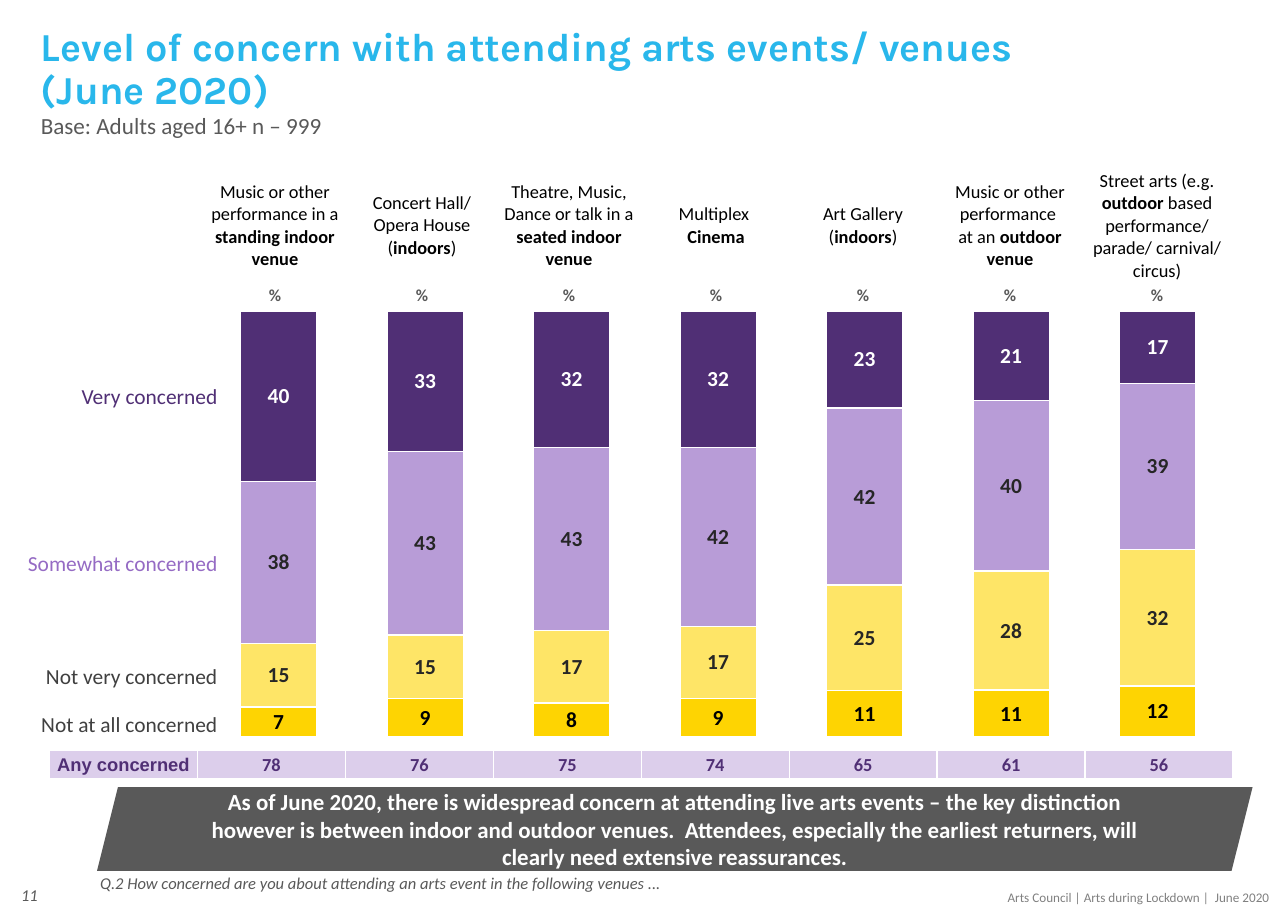
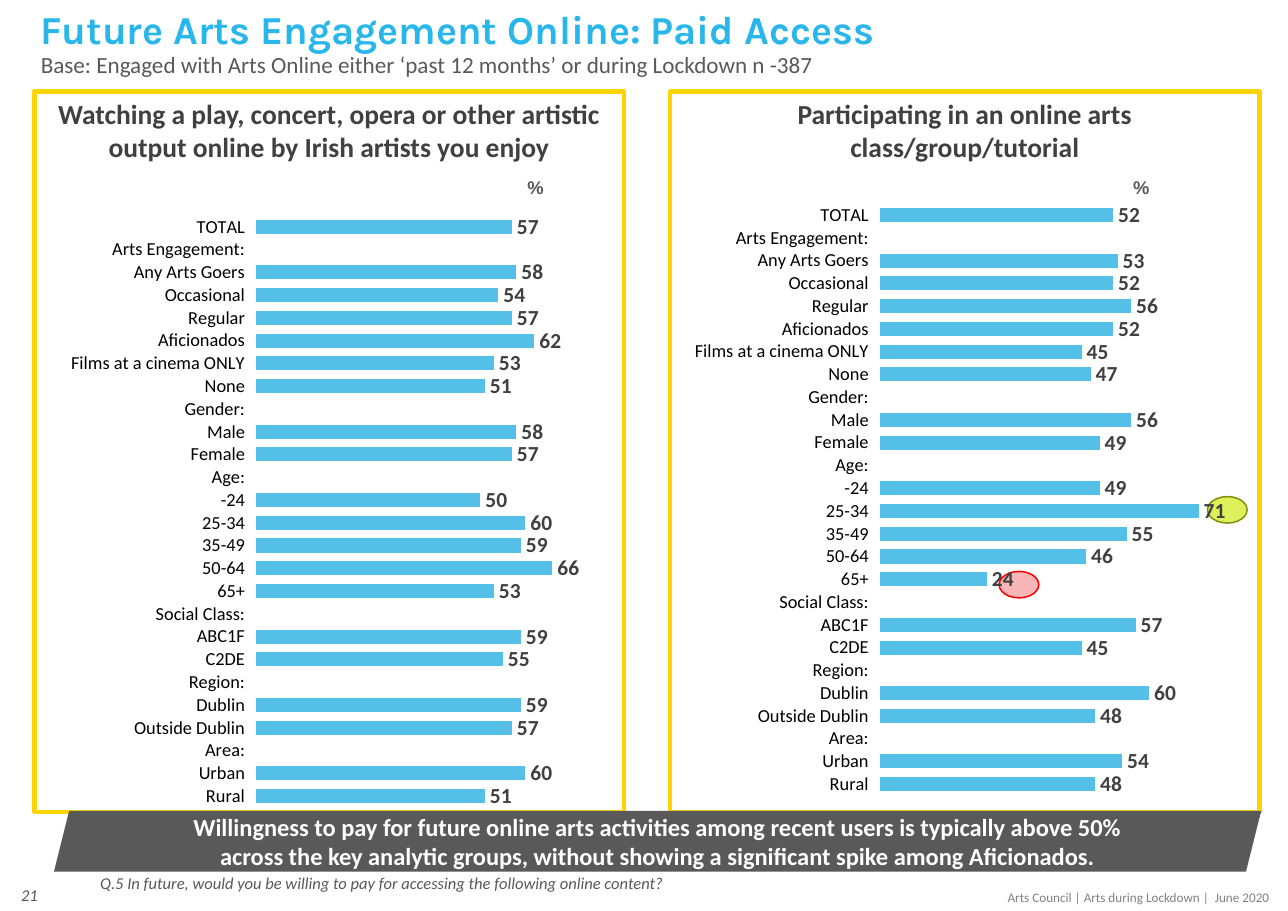
from dataclasses import dataclass, replace

from lxml.etree import SubElement
from pptx import Presentation
from pptx.chart.data import CategoryChartData
from pptx.dml.color import RGBColor
from pptx.enum.chart import XL_CHART_TYPE, XL_LABEL_POSITION, XL_TICK_MARK
from pptx.enum.shapes import MSO_SHAPE
from pptx.enum.text import MSO_ANCHOR, MSO_AUTO_SIZE, PP_ALIGN
from pptx.oxml import parse_xml
from pptx.oxml.ns import nsdecls, qn
from pptx.util import Pt

WHITE = RGBColor(0xFF, 0xFF, 0xFF)
BLACK = RGBColor(0x00, 0x00, 0x00)
INK = RGBColor(0x26, 0x26, 0x26)
CHARCOAL = RGBColor(0x40, 0x40, 0x40)
SLATE = RGBColor(0x59, 0x59, 0x59)
GREY = RGBColor(0x80, 0x80, 0x80)
TITLE_BLUE = RGBColor(0x29, 0xB7, 0xEB)
BAR_BLUE = RGBColor(0x54, 0xC0, 0xE8)
PURPLE = RGBColor(0x50, 0x2F, 0x75)
VIOLET = RGBColor(0x95, 0x6B, 0xC4)
LILAC = RGBColor(0xB8, 0x9C, 0xD7)
PALE_LILAC = RGBColor(0xDC, 0xCE, 0xEB)
PALE_YELLOW = RGBColor(0xFE, 0xE5, 0x67)
YELLOW = RGBColor(0xFE, 0xD4, 0x02)
LIME = RGBColor(0xDE, 0xF1, 0x5B)
OLIVE = RGBColor(0x81, 0x91, 0x0D)
PINK = RGBColor(0xF8, 0xB6, 0xB8)
RED = RGBColor(0xFF, 0x00, 0x00)

NO_TABLE_STYLE = "{2D5ABB26-0587-4C30-8999-92F81FD0307C}"


@dataclass(frozen=True)
class Style:
    size: float
    color: RGBColor
    font: str = "Calibri"
    bold: bool = False
    italic: bool = False


TITLE = Style(25.9, TITLE_BLUE, "Karla", bold=True)
SUBTITLE = Style(15.1, SLATE)
NOTE = Style(10.8, SLATE, italic=True)
FOOTER = Style(8.6, GREY)
BAND = Style(15, WHITE, bold=True)
HEADING = Style(18, CHARCOAL, bold=True)
VENUE = Style(12, BLACK)
PERCENT = Style(11, SLATE, bold=True)
LEVEL = Style(14, PURPLE)
NET = Style(12, PURPLE, bold=True)
VALUE = Style(14, CHARCOAL, bold=True)

VENUES = [
    "Music or other performance in a **standing indoor venue**",
    "Concert Hall/\nOpera House (**indoors**)",
    "Theatre, Music, Dance or talk in a **seated indoor venue**",
    "Multiplex \n**Cinema**",
    "Art Gallery (**indoors**)",
    "Music or other performance \nat an **outdoor venue**",
    "Street arts (e.g. **outdoor** based performance/ parade/ carnival/ circus)",
]
# level of concern, its text colour, bar colour, value colour, values by venue
CONCERN = [
    ("Very concerned", PURPLE, PURPLE, WHITE, [40, 33, 32, 32, 23, 21, 17]),
    ("Somewhat concerned", VIOLET, LILAC, INK, [38, 43, 43, 42, 42, 40, 39]),
    ("Not very concerned", CHARCOAL, PALE_YELLOW, INK, [15, 15, 17, 17, 25, 28, 32]),
    ("Not at all concerned", CHARCOAL, YELLOW, BLACK, [7, 9, 8, 9, 11, 11, 12]),
]
ANY_CONCERNED = [78, 76, 75, 74, 65, 61, 56]

GROUPS = [
    "TOTAL", "Arts Engagement:", "Any Arts Goers", "Occasional", "Regular",
    "Aficionados", "Films at a cinema ONLY", "None", "Gender:", "Male", "Female",
    "Age:", "-24", "25-34", "35-49", "50-64", "65+", "Social Class:", "ABC1F",
    "C2DE", "Region:", "Dublin", "Outside Dublin", "Area:", "Urban", "Rural",
]
WATCHING = [57, None, 58, 54, 57, 62, 53, 51, None, 58, 57, None, 50,
            60, 59, 66, 53, None, 59, 55, None, 59, 57, None, 60, 51]
PARTICIPATING = [52, None, 53, 52, 56, 52, 45, 47, None, 56, 49, None, 49,
                 71, 55, 46, 24, None, 57, 45, None, 60, 48, None, 54, 48]


def points(*lengths):
    return [Pt(length) for length in lengths]


def set_font(font, style):
    font.size = Pt(style.size)
    font.name = style.font
    font.bold = style.bold
    font.italic = style.italic
    font.color.rgb = style.color


def write(frame, text, style, align=PP_ALIGN.LEFT, spacing=None):
    """Write text run by run; newlines part paragraphs, ** marks bold."""
    frame.word_wrap = True
    for index, line in enumerate(text.split("\n")):
        paragraph = frame.add_paragraph() if index else frame.paragraphs[0]
        paragraph.alignment = align
        paragraph.line_spacing = spacing
        for part_index, part in enumerate(line.split("**")):
            if part:
                run = paragraph.add_run()
                run.text = part
                set_font(run.font, replace(style, bold=style.bold or part_index % 2 == 1))
        if not line:
            SubElement(paragraph._p, qn("a:endParaRPr")).set("sz", str(int(style.size * 100)))


def add_text(slide, box, text, style, align=PP_ALIGN.LEFT, spacing=None):
    frame = slide.shapes.add_textbox(*points(*box)).text_frame
    write(frame, text, style, align, spacing)


def add_figure(slide, kind, box, fill=None, line=None, line_width=1):
    figure = slide.shapes.add_shape(kind, *points(*box))
    figure.shadow.inherit = False
    if fill is None:
        figure.fill.background()
    else:
        figure.fill.solid()
        figure.fill.fore_color.rgb = fill
    if line is None:
        figure.line.fill.background()
    else:
        figure.line.color.rgb = line
        figure.line.width = Pt(line_width)
    return figure


def add_band(slide, box, text, size):
    frame = add_figure(slide, MSO_SHAPE.PARALLELOGRAM, box, SLATE).text_frame
    frame.margin_left = frame.margin_right = frame.margin_top = frame.margin_bottom = 0
    frame.vertical_anchor = MSO_ANCHOR.MIDDLE
    write(frame, text, replace(BAND, size=size), PP_ALIGN.CENTER)


def outline_cell(cell, color):
    properties = cell._tc.get_or_add_tcPr()
    for index, side in enumerate(("lnL", "lnR", "lnT", "lnB")):
        properties.insert(index, parse_xml(
            f'<a:{side} {nsdecls("a")} w="12700"><a:solidFill>'
            f'<a:srgbClr val="{color}"/></a:solidFill></a:{side}>'))


def add_grid(slide, left, top, column_widths, row_heights, rows,
             align=PP_ALIGN.CENTER, fill=None):
    """Add a table; rows hold (text, style) pairs."""
    frame = slide.shapes.add_table(len(rows), len(column_widths), *points(
        left, top, sum(column_widths), sum(row_heights)))
    table = frame.table
    table.first_row = table.horz_banding = False
    for style_id in frame._element.iter(qn("a:tableStyleId")):
        style_id.text = NO_TABLE_STYLE
    for column, width in zip(table.columns, column_widths):
        column.width = Pt(width)
    for row, height, entries in zip(table.rows, row_heights, rows):
        row.height = Pt(height)
        for cell, (text, style) in zip(row.cells, entries):
            cell.margin_left = cell.margin_right = cell.margin_top = Pt(0.7)
            cell.margin_bottom = 0
            cell.vertical_anchor = MSO_ANCHOR.MIDDLE
            write(cell.text_frame, text, style, align)
            if fill is None:
                cell.fill.background()
            else:
                cell.fill.solid()
                cell.fill.fore_color.rgb = fill
                outline_cell(cell, WHITE)


def place_plot(chart, area):
    """Fix the inner plot area, given as fractions of the chart."""
    plot_area = chart._chartSpace.find(".//" + qn("c:plotArea"))
    for old in plot_area.findall(qn("c:layout")):
        plot_area.remove(old)
    layout = parse_xml(f'<c:layout {nsdecls("c")}/>')
    plot_area.insert(0, layout)
    manual = SubElement(layout, qn("c:manualLayout"))
    settings = [("layoutTarget", "inner"), ("xMode", "edge"), ("yMode", "edge")]
    for tag, value in settings + list(zip("xywh", area)):
        SubElement(manual, qn("c:" + tag)).set("val", str(value))


def add_bars(slide, kind, box, area, categories, series, gap, position, line_width):
    """Add a bar chart; series hold (name, values, fill, label style)."""
    data = CategoryChartData(number_format="0")
    data.categories = categories
    for name, values, _, _ in series:
        data.add_series(name, values)
    chart = slide.shapes.add_chart(kind, *points(*box), data).chart
    chart.has_legend = chart.has_title = False
    set_font(chart.font, VENUE)
    place_plot(chart, area)
    chart.value_axis.visible = False
    chart.value_axis.has_major_gridlines = False
    plot = chart.plots[0]
    plot.vary_by_categories = False
    plot.gap_width = gap
    for bars, (_, _, fill, label_style) in zip(plot.series, series):
        bars.format.fill.solid()
        bars.format.fill.fore_color.rgb = fill
        bars.format.line.color.rgb = WHITE
        bars.format.line.width = Pt(line_width)
        labels = bars.data_labels
        labels.show_value = True
        labels.position = position
        labels.number_format = "0"
        labels.number_format_is_linked = False
        set_font(labels.font, label_style)
    return chart


def start_slide(deck, number, title, title_top, base, base_top, question):
    slide = deck.slides.add_slide(deck.slide_layouts[5])
    heading = slide.shapes.title
    heading.left, heading.top, heading.width, heading.height = points(
        19.6, title_top, 675.4, 32.4)
    heading.text_frame.auto_size = MSO_AUTO_SIZE.NONE
    heading.text_frame.vertical_anchor = MSO_ANCHOR.TOP
    write(heading.text_frame, title, TITLE, spacing=0.9)
    add_text(slide, (19.6, base_top, 752.4, 28), base, SUBTITLE, spacing=0.9)
    add_text(slide, (58.3, 568.1, 646, 24.5), question, NOTE, spacing=0.9)
    add_text(slide, (555.8, 577.4, 281.5, 18),
             "Arts Council | Arts during Lockdown |  June 2020", FOOTER, PP_ALIGN.RIGHT)
    add_text(slide, (0, 574.5, 31.8, 20), str(number), NOTE, PP_ALIGN.RIGHT)
    return slide


def add_concern_slide(deck):
    slide = start_slide(
        deck, 11, "Level of concern with attending arts events/ venues (June 2020)", 14.4,
        "Base: Adults aged 16+ n – 999", 71.3,
        "Q.2 How concerned are you about attending an arts event in the following venues ...")
    series = [(level, values, fill, replace(VALUE, color=ink))
              for level, _, fill, ink, values in CONCERN]
    chart = add_bars(slide, XL_CHART_TYPE.COLUMN_STACKED_100, (100.5, 194.2, 704.2, 301.7),
                     (0.048, 0.03, 0.952, 0.923), [str(n + 1) for n in range(len(VENUES))],
                     series, 92, XL_LABEL_POSITION.CENTER, 1)
    chart.plots[0].overlap = 100
    chart.category_axis.visible = False
    chart.value_axis.reverse_order = True
    add_grid(slide, 131.7, 110.5, [96.1] * len(VENUES), [73.2, 18],
             [[(venue, VENUE) for venue in VENUES], [("%", PERCENT)] * len(VENUES)])
    add_grid(slide, 12.6, 203.6, [130.3], [110.9, 108, 39.6, 22.3],
             [[(level, replace(LEVEL, color=color))] for level, color, *_ in CONCERN],
             PP_ALIGN.RIGHT)
    add_grid(slide, 32.4, 490.3, [96.7] * (len(VENUES) + 1), [18.7],
             [[("Any concerned", replace(NET, font="Arial"))]
              + [(str(net), NET) for net in ANY_CONCERNED]], fill=PALE_LILAC)
    add_band(slide, (63.4, 514.4, 755.3, 54.7),
             "As of June 2020, there is widespread concern at attending live arts events – "
             "the key distinction however is between indoor and outdoor venues.  Attendees, "
             "especially the earliest returners, will clearly need extensive reassurances.", 15)


def add_panel(slide, left, heading, values, chart_corner, plot_corner, percent_left):
    frame = add_figure(slide, MSO_SHAPE.RECTANGLE, (left, 59.7, 385.5, 470.9),
                       line=YELLOW, line_width=3).text_frame
    frame.vertical_anchor = MSO_ANCHOR.TOP
    write(frame, heading, HEADING, PP_ALIGN.CENTER)
    chart = add_bars(slide, XL_CHART_TYPE.BAR_CLUSTERED, (*chart_corner, 457.9, 411.1),
                     (*plot_corner, 0.643, 0.941), GROUPS,
                     [("Series 1", values, BAR_BLUE, VALUE)], 50,
                     XL_LABEL_POSITION.OUTSIDE_END, 0.75)
    chart.value_axis.minimum_scale = 0
    chart.value_axis.maximum_scale = 100
    groups = chart.category_axis
    groups.reverse_order = True
    groups.major_tick_mark = XL_TICK_MARK.OUTSIDE
    groups.format.line.fill.background()
    set_font(groups.tick_labels.font, VENUE)
    percent = replace(PERCENT, size=12, font="Arial")
    add_grid(slide, percent_left, 114.8, [2.2, 40.3], [14.4], [[("", percent), ("%", percent)]])


def add_paid_access_slide(deck):
    slide = start_slide(
        deck, 21, "Future Arts Engagement Online: Paid Access", 2.9,
        "Base: Engaged with Arts Online either ‘past 12 months’ or during Lockdown n -387", 31.3,
        "Q.5 In future, would you be willing to pay for accessing the following online content?")
    for left, top, fill, line in [(789.3, 324.5, LIME, OLIVE), (653.1, 373.4, PINK, RED)]:
        add_figure(slide, MSO_SHAPE.OVAL, (left, top, 25.9, 17.3), fill, line)
    add_panel(slide, 22.4, "Watching a play, concert, opera or other artistic output online "
              "by Irish artists you enjoy", WATCHING, (25.3, 119.4), (0.31, 0.052), 325.7)
    add_panel(slide, 437.9, "Participating in an online arts class/group/tutorial",
              PARTICIPATING, (437.1, 119.1), (0.301, 0.034), 721.7)
    add_band(slide, (35.3, 529.9, 789.1, 39.6),
             "Willingness to pay for future online arts activities among recent users is "
             "typically above 50% across the key analytic groups, without showing a "
             "significant spike among Aficionados.", 16)


def main():
    deck = Presentation()
    deck.slide_width, deck.slide_height = points(841.89, 595.28)
    add_concern_slide(deck)
    add_paid_access_slide(deck)
    deck.save("out.pptx")


if __name__ == "__main__":
    main()
